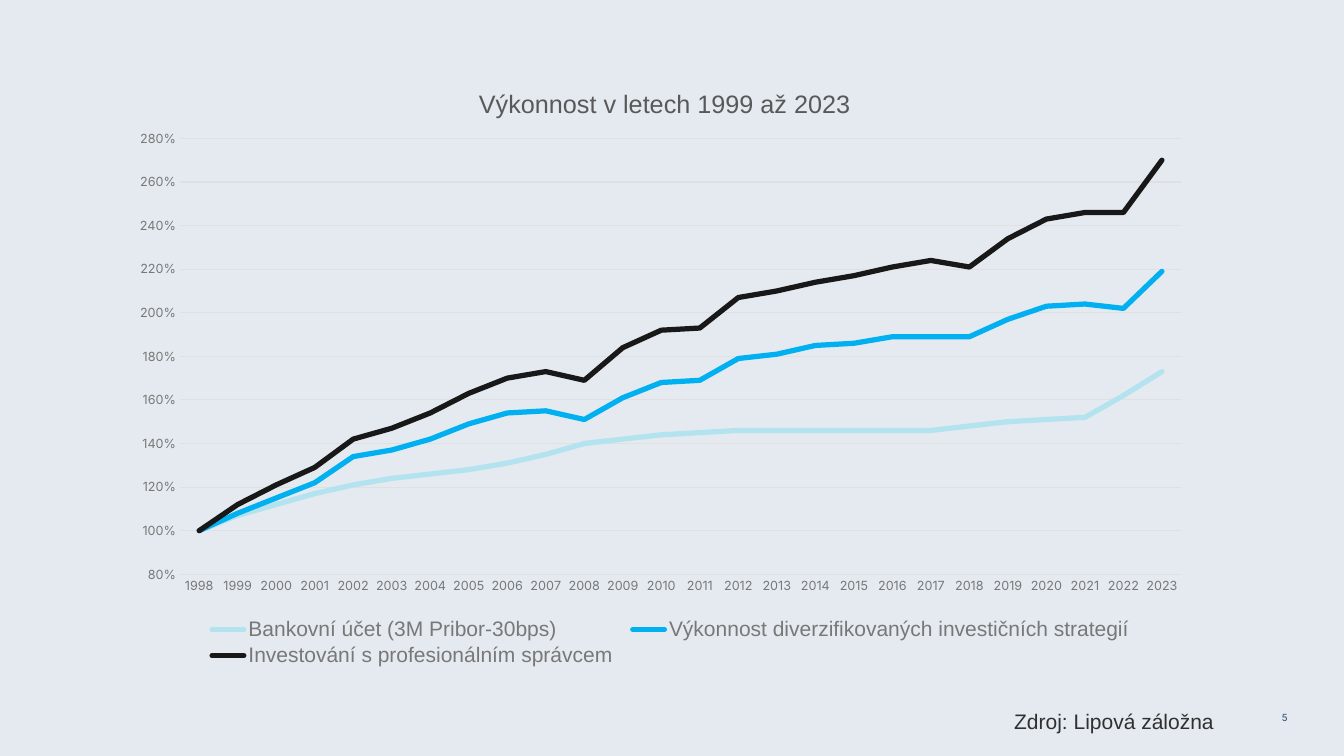
import pptx
import pptx.chart.data
import pptx.dml.color
import pptx.enum.chart
import pptx.enum.text
import pptx.oxml
import pptx.oxml.ns
import pptx.util

RGBColor = pptx.dml.color.RGBColor
BACKGROUND = RGBColor(0xE4, 0xEA, 0xF0)
INK = RGBColor(0x30, 0x30, 0x30)
TITLE_GRAY = RGBColor(0x59, 0x59, 0x59)
LABEL_GRAY = RGBColor(0x78, 0x78, 0x78)
GRID_GRAY = RGBColor(0xE0, 0xE0, 0xE0)
NUMBER_BLUE = RGBColor(0x24, 0x53, 0x75)
PALE_BLUE = RGBColor(0xB3, 0xE3, 0xEE)
BRIGHT_BLUE = RGBColor(0x00, 0xB0, 0xF0)
BLACK = RGBColor(0x18, 0x18, 0x18)

YEARS = [str(year) for year in range(1998, 2024)]
STRATEGIES = [
    ("Bankovní účet (3M Pribor-30bps)", PALE_BLUE,
     [1, 1.07, 1.12, 1.17, 1.21, 1.24, 1.26, 1.28, 1.31, 1.35, 1.4, 1.42, 1.44,
      1.45, 1.46, 1.46, 1.46, 1.46, 1.46, 1.46, 1.48, 1.5, 1.51, 1.52, 1.62, 1.73]),
    ("Výkonnost diverzifikovaných investičních strategií", BRIGHT_BLUE,
     [1, 1.08, 1.15, 1.22, 1.34, 1.37, 1.42, 1.49, 1.54, 1.55, 1.51, 1.61, 1.68,
      1.69, 1.79, 1.81, 1.85, 1.86, 1.89, 1.89, 1.89, 1.97, 2.03, 2.04, 2.02, 2.19]),
    ("Investování s profesionálním správcem", BLACK,
     [1, 1.12, 1.21, 1.29, 1.42, 1.47, 1.54, 1.63, 1.7, 1.73, 1.69, 1.84, 1.92,
      1.93, 2.07, 2.1, 2.14, 2.17, 2.21, 2.24, 2.21, 2.34, 2.43, 2.46, 2.46, 2.7]),
]


def set_font(font, name, size, color):
    font.name = name
    font.size = pptx.util.Pt(size)
    font.bold = False
    font.color.rgb = color


def place_in_chart(part, index, target="", **percents):
    """Fix a chart part at percentages of the chart; index is its layout's place among the children."""
    for automatic in part.findall(pptx.oxml.ns.qn("c:layout")):
        part.remove(automatic)
    inner = f'<c:layoutTarget val="{target}"/>' if target else ""
    modes = '<c:xMode val="edge"/><c:yMode val="edge"/>'
    sizes = "".join(f'<c:{key} val="{value / 100:.4f}"/>' for key, value in percents.items())
    part.insert(index, pptx.oxml.parse_xml(
        f'<c:layout {pptx.oxml.ns.nsdecls("c")}><c:manualLayout>'
        f'{inner}{modes}{sizes}</c:manualLayout></c:layout>'))


class PerformanceSlide:
    """Holds the slide and its style; positions are percentages of the slide's size."""

    heading_font = "Arial"
    label_font = "Inter"

    def __init__(self, deck):
        self.deck = deck
        self.slide = deck.slides.add_slide(deck.slide_layouts[6])
        self.slide.background.fill.solid()
        self.slide.background.fill.fore_color.rgb = BACKGROUND

    def box(self, left, top, width, height):
        across, down = self.deck.slide_width / 100, self.deck.slide_height / 100
        return [round(share * unit) for share, unit in
                zip((left, top, width, height), (across, down, across, down))]

    def text(self, wording, area, font, size, color, inset=(0.1, 0.05),
             align=pptx.enum.text.PP_ALIGN.LEFT, spacing=1.0):
        frame = self.slide.shapes.add_textbox(*self.box(*area)).text_frame
        frame.word_wrap = True
        frame.margin_left = frame.margin_right = pptx.util.Inches(inset[0])
        frame.margin_top = frame.margin_bottom = pptx.util.Inches(inset[1])
        paragraph = frame.paragraphs[0]
        paragraph.text = wording
        paragraph.alignment = align
        paragraph.line_spacing = spacing
        set_font(paragraph.font, font, size, color)

    def line_chart(self, heading, years, strategies, area):
        data = pptx.chart.data.CategoryChartData(number_format="0%")
        data.categories = years
        for name, _, values in strategies:
            data.add_series(name, values)
        chart = self.slide.shapes.add_chart(
            pptx.enum.chart.XL_CHART_TYPE.LINE, *self.box(*area), data).chart
        set_font(chart.font, self.label_font, 10, INK)
        for series, (_, color, _) in zip(chart.plots[0].series, strategies):
            series.smooth = False
            series.marker.style = pptx.enum.chart.XL_MARKER_STYLE.NONE
            series.format.line.color.rgb = color
            series.format.line.width = pptx.util.Pt(3.75)
            series._element.find(".//" + pptx.oxml.ns.qn("a:ln")).set("cap", "rnd")
        chart.plots[0].vary_by_categories = False
        self.chart_axes(chart)
        self.chart_heading(chart, heading)
        self.chart_legend(chart)
        plot_area = chart._chartSpace.find(".//" + pptx.oxml.ns.qn("c:plotArea"))
        place_in_chart(plot_area, 0, "inner", x=5.63, y=13.15, w=92.38, h=70.78)

    def chart_axes(self, chart):
        years, growth = chart.category_axis, chart.value_axis
        for axis in (years, growth):
            axis.major_tick_mark = axis.minor_tick_mark = pptx.enum.chart.XL_TICK_MARK.NONE
            set_font(axis.tick_labels.font, self.label_font, 9, LABEL_GRAY)
        growth.minimum_scale, growth.maximum_scale, growth.major_unit = 0.8, 2.8, 0.2
        growth.tick_labels.number_format = "0%"
        growth.tick_labels.number_format_is_linked = False
        growth.format.line.fill.background()
        for line in (years.format.line, growth.major_gridlines.format.line):
            line.color.rgb = GRID_GRAY
            line.width = pptx.util.Pt(0.75)

    def chart_heading(self, chart, heading):
        chart.has_title = True
        paragraph = chart.chart_title.text_frame.paragraphs[0]
        paragraph.text = heading
        set_font(paragraph.font, self.heading_font, 18, TITLE_GRAY)
        place_in_chart(chart.chart_title._element, 1, x=32.8, y=4.1)

    def chart_legend(self, chart):
        chart.has_legend = True
        chart.legend.position = pptx.enum.chart.XL_LEGEND_POSITION.BOTTOM
        chart.legend.include_in_layout = False
        set_font(chart.legend.font, self.heading_font, 15, LABEL_GRAY)
        place_in_chart(chart.legend._element, 1, x=7.4, y=90.5, w=87, h=9)


def main():
    deck = pptx.Presentation()
    deck.slide_width, deck.slide_height = pptx.util.Inches(13.33), pptx.util.Inches(7.5)
    page = PerformanceSlide(deck)
    page.line_chart("Výkonnost v letech 1999 až 2023", YEARS, STRATEGIES,
                    (8.85, 7.6, 80.65, 81.47))
    page.text("Zdroj: Lipová záložna", (74.72, 93.33, 23.78, 5.47),
              page.heading_font, 15, INK, spacing=0.92)
    page.text("5", (92.72, 94.13, 3.08, 1.87), page.label_font, 7, NUMBER_BLUE,
              inset=(0, 0), align=pptx.enum.text.PP_ALIGN.RIGHT)
    deck.save("out.pptx")


if __name__ == "__main__":
    main()
